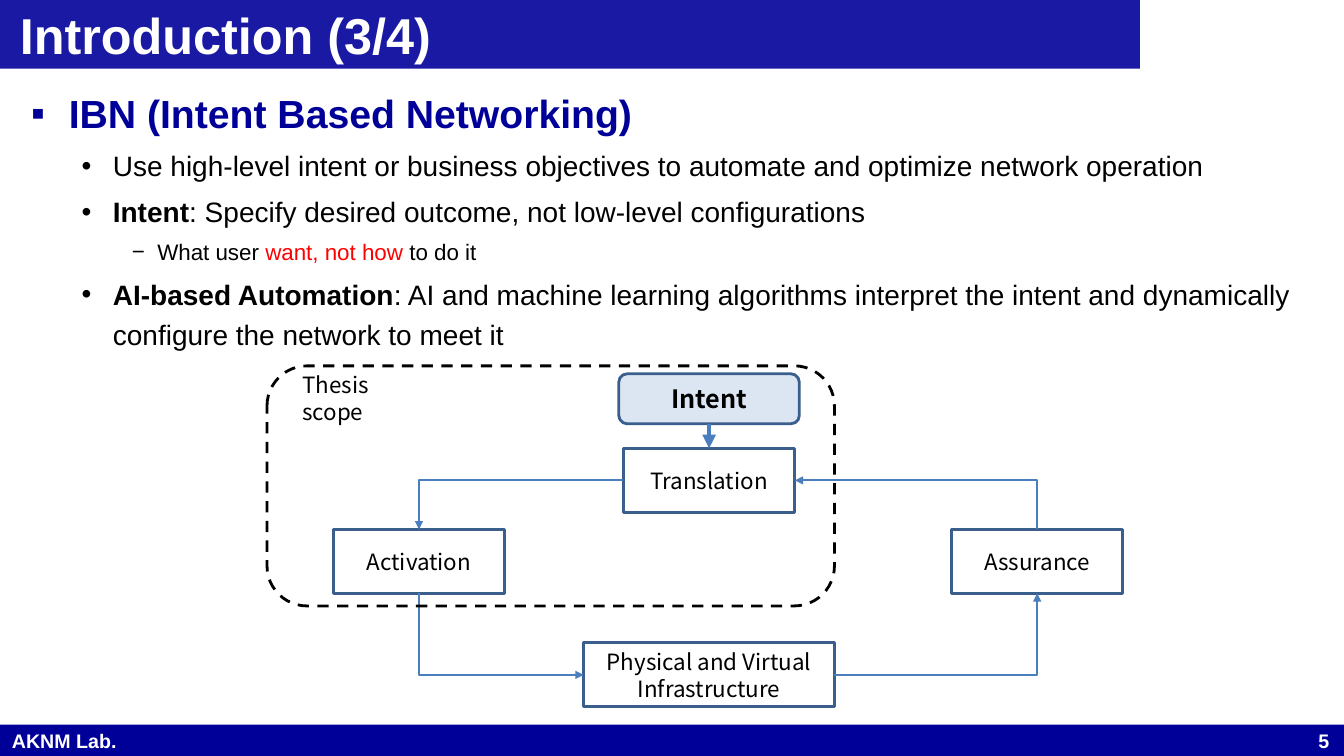
from dataclasses import dataclass

from lxml.etree import SubElement
from pptx import Presentation
from pptx.dml.color import RGBColor
from pptx.enum.dml import MSO_LINE
from pptx.enum.shapes import MSO_CONNECTOR, MSO_SHAPE
from pptx.enum.text import MSO_ANCHOR, MSO_AUTO_SIZE, PP_ALIGN
from pptx.oxml.ns import qn
from pptx.util import Cm, Pt


@dataclass(frozen=True)
class Theme:
    navy: str = "000099"
    white: str = "FFFFFF"
    black: str = "000000"
    red: str = "FF0000"
    pale_blue: str = "DCE6F2"
    outline: str = "3A5F8C"
    arrow: str = "4B7EBC"
    text_font: str = "Arial"
    diagram_font: str = "Noto Sans CJK KR"
    title_size: int = 36
    body_sizes: tuple = (28, 20, 16)
    intent_size: int = 18
    label_size: int = 16
    footer_size: int = 14


theme = Theme()


def write(para, text, size, color=theme.black, font=theme.text_font, bold=False, align=None):
    span = para.add_run()
    span.text = text
    span.font.size = Pt(size)
    span.font.name = font
    span.font.bold = bold
    span.font.color.rgb = RGBColor.from_string(color)
    if align is not None:
        para.alignment = align


def add_box(kind, left, top, width, height, fill=None, line=None):
    """Add a shape measured in centimetres, without shadow."""
    box = slide.shapes.add_shape(kind, Cm(left), Cm(top), Cm(width), Cm(height))
    box.shadow.inherit = False
    box.text_frame.vertical_anchor = MSO_ANCHOR.MIDDLE
    if fill:
        box.fill.solid()
        box.fill.fore_color.rgb = RGBColor.from_string(fill)
    else:
        box.fill.background()
    if line:
        box.line.color.rgb = RGBColor.from_string(line)
        box.line.width = Pt(2)
    else:
        box.line.fill.background()
    return box


deck = Presentation()
deck.slide_width, deck.slide_height = Cm(33.87), Cm(19.05)
slide = deck.slides.add_slide(deck.slide_layouts[1])
title, body = slide.placeholders

# Footer
footer = add_box(MSO_SHAPE.RECTANGLE, 0, 18.26, 33.87, 0.79, fill=theme.navy)
page_number = add_box(MSO_SHAPE.RECTANGLE, 31.87, 18.26, 2, 0.79)
footer.text_frame.margin_left = Cm(0.3)
page_number.text_frame.margin_right = Cm(0.37)
for box, text, align in ((footer, "AKNM Lab.", PP_ALIGN.LEFT), (page_number, "5", PP_ALIGN.RIGHT)):
    write(box.text_frame.paragraphs[0], text, theme.footer_size, theme.white, bold=True, align=align)

# Title
title.left, title.top, title.width, title.height = Cm(0), Cm(0), Cm(28.73), Cm(1.73)
title.fill.solid()
title.fill.fore_color.rgb = RGBColor.from_string(theme.navy)
title_color = title.fill._xPr.find(qn("a:solidFill"))[0]
SubElement(title_color, qn("a:alpha")).set("val", "90000")
frame = title.text_frame
frame.auto_size = MSO_AUTO_SIZE.NONE
frame.vertical_anchor = MSO_ANCHOR.MIDDLE
frame.margin_left = frame.margin_right = Cm(0.5)
write(frame.paragraphs[0], "Introduction (3/4)", theme.title_size, theme.white, bold=True, align=PP_ALIGN.LEFT)

# Bullet list: level and (text, colour, bold) spans
bullets = [
    (0, [("IBN (Intent Based Networking)", theme.navy, True)]),
    (1, [("Use high-level intent or business objectives to automate and optimize network operation",
          theme.black, False)]),
    (1, [("Intent", theme.black, True),
         (": Specify desired outcome, not low-level configurations", theme.black, False)]),
    (2, [("What user ", theme.black, False), ("want, not how ", theme.red, False),
         ("to do it", theme.black, False)]),
    (1, [("AI-based Automation", theme.black, True),
         (": AI and machine learning algorithms interpret the intent and dynamically "
          "configure the network to meet it", theme.black, False)]),
]
levels = [("▪", 0.95, 0.95, 1.0), ("•", 2.06, 0.79, 1.2), ("−", 3.18, 0.64, 1.2)]

body.left, body.top, body.width, body.height = Cm(0.53), Cm(2.13), Cm(32.8), Cm(15.6)
frame = body.text_frame
frame.auto_size = MSO_AUTO_SIZE.NONE
for index, (level, spans) in enumerate(bullets):
    para = frame.add_paragraph() if index else frame.paragraphs[0]
    mark, margin, hanging, spacing = levels[level]
    size = theme.body_sizes[level]
    para.level = level
    para.line_spacing = spacing
    para.space_before = Pt(size * 0.2)
    properties = para._p.get_or_add_pPr()
    properties.set("marL", str(Cm(margin)))
    properties.set("indent", str(-Cm(hanging)))
    SubElement(properties, qn("a:buFont")).set("typeface", theme.text_font)
    SubElement(properties, qn("a:buChar")).set("char", mark)
    for text, color, bold in spans:
        write(para, text, size, color, bold=bold)

# Diagram boxes: name, centre, top, width
middle, left_side, right_side = 17.87, 10.56, 26.14
stages = {}
for name, center, top, width in (
    ("Translation", middle, 11.3, 4.32),
    ("Intent", middle, 9.42, 4.55),
    ("Activation", left_side, 13.34, 4.32),
    ("Assurance", right_side, 13.34, 4.32),
    ("Physical and Virtual Infrastructure", middle, 16.2, 6.32),
):
    is_intent = name == "Intent"
    kind = MSO_SHAPE.ROUNDED_RECTANGLE if is_intent else MSO_SHAPE.RECTANGLE
    box = add_box(kind, center - width / 2, top, width, 1.26 if is_intent else 1.61,
                  theme.pale_blue if is_intent else theme.white, theme.outline)
    write(box.text_frame.paragraphs[0], name, theme.intent_size if is_intent else theme.label_size,
          font=theme.diagram_font, bold=is_intent, align=PP_ALIGN.CENTER)
    stages[name] = box

# Arrows between the middles of sides
TOP, LEFT, BOTTOM, RIGHT = range(4)
infrastructure = "Physical and Virtual Infrastructure"
for start, start_side, end, end_side in (
    ("Translation", LEFT, "Activation", TOP),
    ("Intent", BOTTOM, "Translation", TOP),
    ("Activation", BOTTOM, infrastructure, LEFT),
    (infrastructure, RIGHT, "Assurance", BOTTOM),
    ("Assurance", TOP, "Translation", RIGHT),
):
    straight = start == "Intent"
    kind = MSO_CONNECTOR.STRAIGHT if straight else MSO_CONNECTOR.ELBOW
    arrow = slide.shapes.add_connector(kind, 0, 0, 0, 0)
    arrow.begin_connect(stages[start], start_side)
    arrow.end_connect(stages[end], end_side)
    arrow.line.color.rgb = RGBColor.from_string(theme.arrow)
    arrow.line.width = Pt(3.25 if straight else 1.5)
    SubElement(arrow.line._get_or_add_ln(), qn("a:tailEnd")).set("type", "triangle")
    shape_properties = arrow._element.spPr
    SubElement(shape_properties, qn("a:effectLst"))
    if straight:
        continue
    shape_properties.find(qn("a:prstGeom")).set("prst", "bentConnector2")
    if start_side in (TOP, BOTTOM):
        # A one-bend connector leaves sideways, so a vertical start is turned a quarter
        width, height = arrow.width, arrow.height
        arrow.left += (width - height) // 2
        arrow.top += (height - width) // 2
        arrow.width, arrow.height = height, width
        frame_transform = shape_properties.find(qn("a:xfrm"))
        quarter_turns = 1 if start_side == BOTTOM else 3
        frame_transform.set("rot", str(quarter_turns * 90 * 60000))
        frame_transform.set("flipH", "0")
        frame_transform.set("flipV", "1")

# Thesis scope
scope = add_box(MSO_SHAPE.ROUNDED_RECTANGLE, 6.73, 9.22, 14.3, 6.05, line=theme.black)
scope.line.dash_style = MSO_LINE.DASH
scope_label = slide.shapes.add_textbox(Cm(7.37), Cm(9.22), Cm(3.78), Cm(0.94))
scope_label.text_frame.word_wrap = True
scope_label.text_frame.margin_right = Cm(1.2)
write(scope_label.text_frame.paragraphs[0], "Thesis scope", theme.label_size, font=theme.diagram_font)

deck.save("out.pptx")
